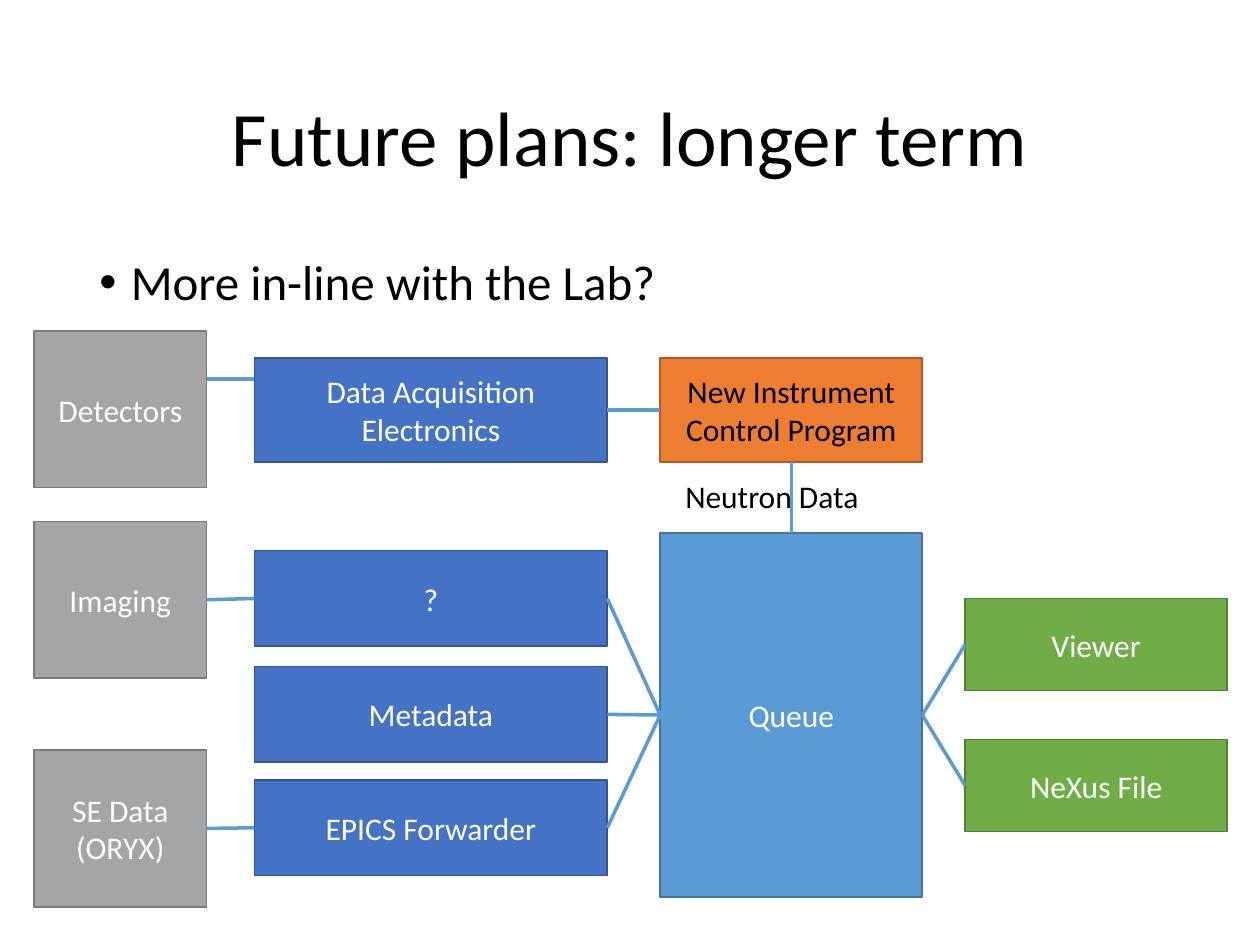
from typing import NamedTuple, Optional

from lxml.etree import SubElement
from pptx import Presentation
from pptx.dml.color import RGBColor
from pptx.enum.shapes import MSO_CONNECTOR, MSO_SHAPE
from pptx.enum.text import MSO_ANCHOR, PP_ALIGN
from pptx.oxml.ns import qn
from pptx.util import Inches, Pt

TOP, LEFT, BOTTOM, RIGHT = range(4)
FONT = "Calibri"
BLACK, WHITE, LINK_COLOR = "000000", "FFFFFF", "5B9BD5"


class Style(NamedTuple):
    fill: str
    line: str
    text: str = WHITE


class Box(NamedTuple):
    text: str
    x: float
    y: float
    w: float
    h: float
    style: Style


class Link(NamedTuple):
    start: str
    start_side: int
    end: str
    end_side: int


SOURCE = Style("A5A5A5", "7A7A7A")
READER = Style("4472C4", "325491")
CONTROL = Style("ED7D31", "AF5C24", BLACK)
STREAM = Style("5B9BD5", "43739E")
OUTPUT = Style("70AD47", "538035")

# Columns, left to right
SOURCE_X, SOURCE_W = 0.27, 1.37
READER_X, READER_W = 2.02, 2.8
STREAM_X, OUTPUT_X, WIDE_W = 5.24, 7.66, 2.08

BOXES = {
    "detectors": Box("Detectors", SOURCE_X, 2.63, SOURCE_W, 1.24, SOURCE),
    "imaging": Box("Imaging", SOURCE_X, 4.14, SOURCE_W, 1.24, SOURCE),
    "se_data": Box("SE Data\n(ORYX)", SOURCE_X, 5.95, SOURCE_W, 1.25, SOURCE),
    "daq": Box("Data Acquisition Electronics", READER_X, 2.84, READER_W, 0.83, READER),
    "unknown": Box("?", READER_X, 4.37, READER_W, 0.76, READER),
    "metadata": Box("Metadata", READER_X, 5.29, READER_W, 0.76, READER),
    "forwarder": Box("EPICS Forwarder", READER_X, 6.19, READER_W, 0.76, READER),
    "control": Box("New Instrument Control Program", STREAM_X, 2.84, WIDE_W, 0.83, CONTROL),
    "stream": Box("Queue", STREAM_X, 4.23, WIDE_W, 2.89, STREAM),
    "analysis": Box("Viewer", OUTPUT_X, 4.75, WIDE_W, 0.73, OUTPUT),
    "file": Box("NeXus File", OUTPUT_X, 5.87, WIDE_W, 0.73, OUTPUT),
}

LINKS = [
    Link("imaging", RIGHT, "unknown", LEFT),
    Link("se_data", RIGHT, "forwarder", LEFT),
    Link("control", LEFT, "daq", RIGHT),
    Link("control", BOTTOM, "stream", TOP),
    *[Link(name, RIGHT, "stream", LEFT) for name in ("unknown", "metadata", "forwarder")],
    *[Link("stream", RIGHT, name, LEFT) for name in ("analysis", "file")],
]


def rgb(color: str) -> RGBColor:
    return RGBColor.from_string(color)


def set_text(tf, text: str, size: float, color: str,
             align: Optional[PP_ALIGN] = None, spacing: Optional[float] = None) -> None:
    tf.text = text
    for p in tf.paragraphs:
        p.alignment = align
        p.line_spacing = spacing
        for r in p.runs:
            r.font.name, r.font.size = FONT, Pt(size)
            r.font.color.rgb = rgb(color)


def add_box(s, box: Box):
    sp = s.shapes.add_shape(MSO_SHAPE.RECTANGLE, *map(Inches, box[1:5]))
    sp.shadow.inherit = False
    sp.fill.solid()
    sp.fill.fore_color.rgb = rgb(box.style.fill)
    sp.line.color.rgb = rgb(box.style.line)
    sp.line.width = Pt(1)
    sp.text_frame.word_wrap = True
    sp.text_frame.vertical_anchor = MSO_ANCHOR.MIDDLE
    set_text(sp.text_frame, box.text, 18, box.style.text, PP_ALIGN.CENTER)
    return sp


def add_line(s, x1: float = 0, y1: float = 0, x2: float = 0, y2: float = 0):
    line = s.shapes.add_connector(MSO_CONNECTOR.STRAIGHT, *map(Inches, (x1, y1, x2, y2)))
    line.line.color.rgb = rgb(LINK_COLOR)
    line.line.width = Pt(2)
    SubElement(line._element.spPr, qn("a:effectLst"))
    return line


def add_link(s, link: Link, shapes: dict) -> None:
    line = add_line(s)
    line.begin_connect(shapes[link.start], link.start_side)
    line.end_connect(shapes[link.end], link.end_side)


def add_bullet(p, indent: float) -> None:
    pPr = p._p.get_or_add_pPr()
    pPr.set("marL", str(Inches(indent)))
    pPr.set("indent", str(-Inches(indent)))
    SubElement(pPr, qn("a:buFont"), typeface="Arial")
    SubElement(pPr, qn("a:buChar"), char="•")


def main() -> None:
    prs = Presentation()
    prs.slide_width, prs.slide_height = Inches(10), Inches(7.5)
    s = prs.slides.add_slide(prs.slide_layouts[5])

    # Title
    title = s.shapes.title
    title.left, title.top, title.width, title.height = map(Inches, (0.69, 0.4, 8.62, 1.45))
    title.text_frame.vertical_anchor = MSO_ANCHOR.MIDDLE
    set_text(title.text_frame, "Future plans: longer term", 44, BLACK, PP_ALIGN.CENTER, 0.9)

    # Bullet point
    body = s.shapes.add_textbox(*map(Inches, (0.69, 2, 8.62, 4.76)))
    body.text_frame.word_wrap = True
    set_text(body.text_frame, "More in-line with the Lab?", 28, BLACK, spacing=0.9)
    p = body.text_frame.paragraphs[0]
    p.space_before = Pt(10)
    add_bullet(p, 0.25)

    # Data flow
    shapes = {name: add_box(s, box) for name, box in BOXES.items()}
    for link in LINKS:
        add_link(s, link, shapes)
    add_line(s, SOURCE_X + SOURCE_W, 3.01, READER_X, 3.01)

    # Label on the control link
    label = s.shapes.add_textbox(*map(Inches, (5.34, 3.74, 1.59, 0.4)))
    label.text_frame.word_wrap = False
    set_text(label.text_frame, "Neutron Data", 18, BLACK)

    prs.save("out.pptx")


if __name__ == "__main__":
    main()
